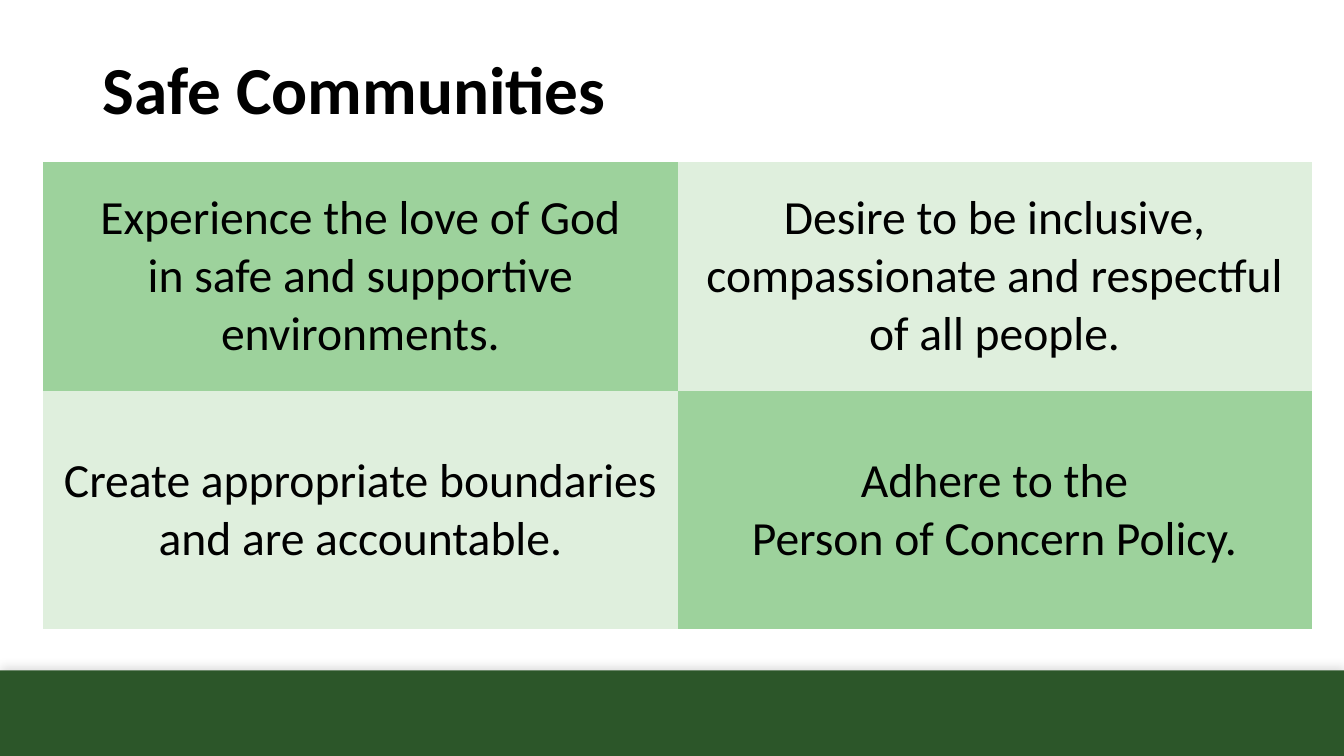
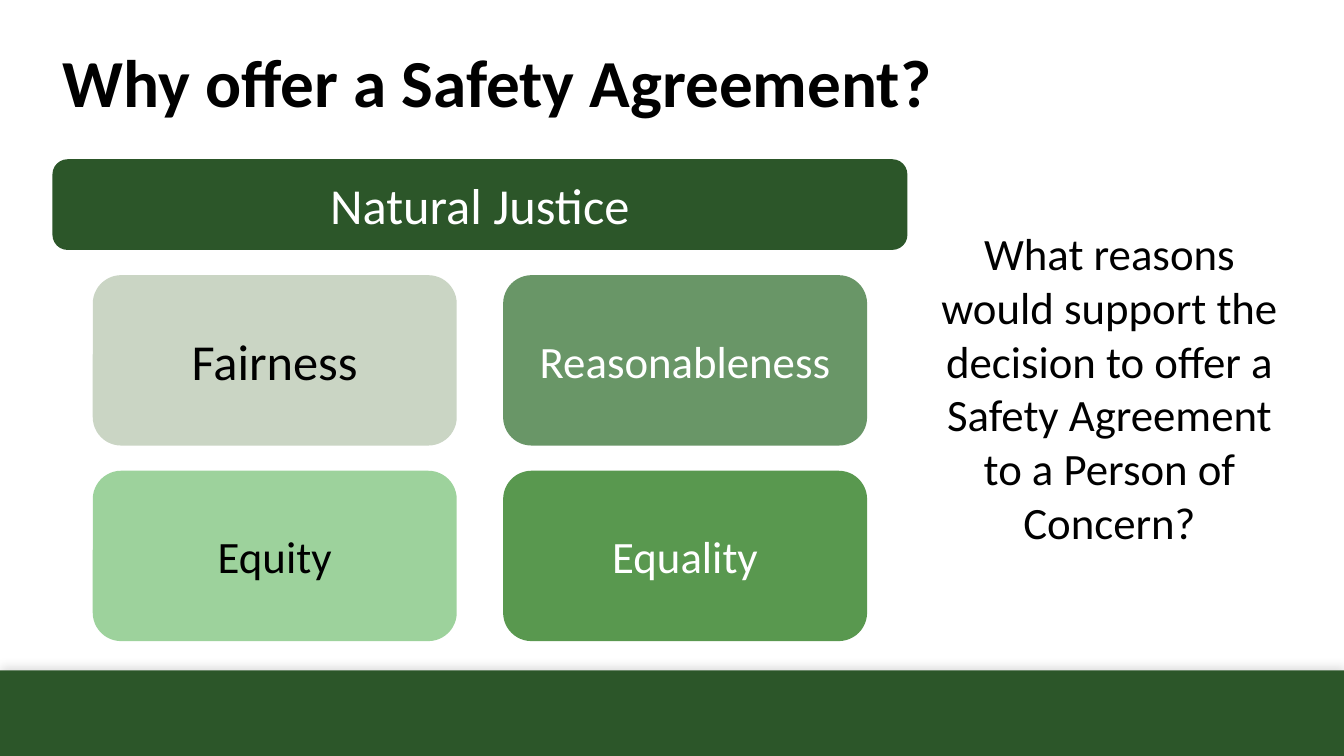
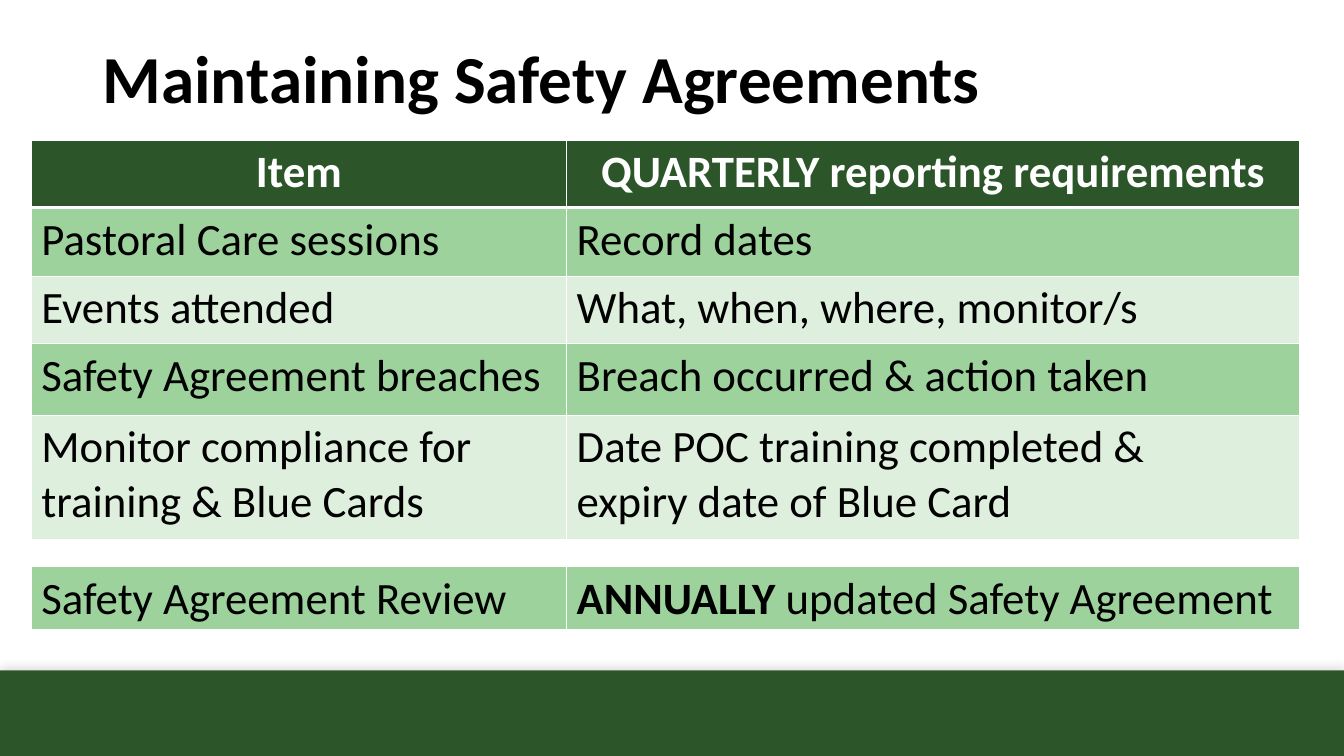
import lxml.etree
import pptx
import pptx.dml.color
import pptx.enum.shapes
import pptx.enum.text
import pptx.oxml.ns
import pptx.util

Inches = pptx.util.Inches
Align = pptx.enum.text.PP_ALIGN
Anchor = pptx.enum.text.MSO_ANCHOR
Shape = pptx.enum.shapes.MSO_SHAPE
qn = pptx.oxml.ns.qn

COLORS = {
    "black": "000000", "white": "FFFFFF", "forest": "2C5629", "mint": "9DD29C",
    "pale": "DFEFDD", "sage": "CAD5C4", "moss": "699667", "leaf": "59984F",
}
FONT = "Calibri"
PLAIN_TABLE_STYLE = "{2D5ABB26-0587-4C30-8999-92F81FD0307C}"
SLIDE_WIDTH, SLIDE_HEIGHT, BAND_HEIGHT = 13.33, 7.5, 0.85

COMMUNITY_ROWS = [
    ("Experience the love of God\vin safe and supportive environments.",
     "Desire to be inclusive, compassionate and respectful of all people."),
    ("Create appropriate boundaries and are accountable.",
     "Adhere to the\vPerson of Concern Policy."),
]
JUSTICE_CARDS = [
    [("Fairness", 36, "black", "sage"), ("Reasonableness", 32, "white", "moss")],
    [("Equity", 32, "black", "mint"), ("Equality", 32, "white", "leaf")],
]
REPORT_ROWS = [
    ("Item", "QUARTERLY reporting requirements"),
    ("Pastoral Care sessions", "Record dates"),
    ("Events attended", "What, when, where, monitor/s"),
    ("Safety Agreement breaches", "Breach occurred & action taken"),
    ("Monitor compliance for training & Blue Cards",
     "Date POC training completed &\nexpiry date of Blue Card"),
]
REPORT_COLUMNS = [5.31, 7.27]


def rgb(name):
    """Return the named colour."""
    return pptx.dml.color.RGBColor.from_string(COLORS[name])


def write_text(frame, text, size=32, color="black", bold=False, lead="",
               align=Align.LEFT, line_spacing=None):
    """Write paragraphs split at newlines, with an optional bold lead."""
    frame.word_wrap = True
    for index, line in enumerate(text.split("\n")):
        paragraph = frame.add_paragraph() if index else frame.paragraphs[0]
        paragraph.text = line
        if lead and not index:
            paragraph.text = ""
            paragraph.add_run().text = lead
            paragraph.add_run().text = line
        paragraph.alignment = align
        paragraph.line_spacing = line_spacing
        for position, run in enumerate(paragraph.runs):
            run.font.name = FONT
            run.font.size = pptx.util.Pt(size)
            run.font.bold = bold or bool(lead and not index and not position)
            run.font.color.rgb = rgb(color)


def add_text(slide, box, text, anchor=Anchor.TOP, **text_format):
    """Add a text box filling the given box."""
    frame = slide.shapes.add_textbox(*map(Inches, box)).text_frame
    frame.vertical_anchor = anchor
    write_text(frame, text, **text_format)


def add_block(slide, kind, box, fill):
    """Add a filled shape without an outline."""
    shape = slide.shapes.add_shape(kind, *map(Inches, box))
    shape.shadow.inherit = False
    shape.fill.solid()
    shape.fill.fore_color.rgb = rgb(fill)
    shape.line.fill.background()
    return shape


def add_card(slide, box, text, size, color, fill):
    """Add a rounded card with a centred label."""
    frame = add_block(slide, Shape.ROUNDED_RECTANGLE, box, fill).text_frame
    frame.vertical_anchor = Anchor.MIDDLE
    write_text(frame, text, size=size, color=color, align=Align.CENTER)


def add_band(slide):
    """Add the footer band with a soft upward shadow."""
    box = (0, SLIDE_HEIGHT - BAND_HEIGHT, SLIDE_WIDTH, BAND_HEIGHT)
    band = add_block(slide, Shape.RECTANGLE, box, "forest")
    effects = band._element.spPr.find(qn("a:effectLst"))
    shadow = lxml.etree.SubElement(
        effects, qn("a:outerShdw"), blurRad=str(pptx.util.Pt(7)),
        dist=str(pptx.util.Pt(3)), dir="16200000", rotWithShape="0")
    color = lxml.etree.SubElement(shadow, qn("a:srgbClr"), val=COLORS["black"])
    lxml.etree.SubElement(color, qn("a:alpha"), val="13000")


def add_titled_slide(presentation, title, left, top):
    """Add a blank slide with the shared band and title style."""
    slide = presentation.slides.add_slide(presentation.slide_layouts[6])
    add_band(slide)
    add_text(slide, (left, top, 11.5, 1.45), title, anchor=Anchor.MIDDLE,
             size=48, bold=True, line_spacing=0.9)
    return slide


def add_plain_table(slide, left, top, columns, rows):
    """Add an unstyled table with the given column widths and row heights."""
    box = (left, top, sum(columns), sum(rows))
    table = slide.shapes.add_table(len(rows), len(columns), *map(Inches, box)).table
    table.first_row = table.horz_banding = False
    table._tbl.tblPr.find(qn("a:tableStyleId")).text = PLAIN_TABLE_STYLE
    for column, width in zip(table.columns, columns):
        column.width = Inches(width)
    for row, height in zip(table.rows, rows):
        row.height = Inches(height)
    return table


def set_borders(cell, **widths):
    """Draw white cell borders, 1 point wide unless a side is given."""
    for side in "LRTB":
        width = str(pptx.util.Pt(widths.get(side, 1)))
        line = lxml.etree.SubElement(
            cell._tc.get_or_add_tcPr(), qn("a:ln" + side), w=width)
        fill = lxml.etree.SubElement(line, qn("a:solidFill"))
        lxml.etree.SubElement(fill, qn("a:srgbClr"), val=COLORS["white"])


def fill_cell(cell, text, fill, anchor=Anchor.TOP, **text_format):
    """Fill a cell and write its text."""
    cell.fill.solid()
    cell.fill.fore_color.rgb = rgb(fill)
    cell.vertical_anchor = anchor
    write_text(cell.text_frame, text, **text_format)


def add_checkerboard(slide, left, top):
    """Add the two by two board of community aims."""
    table = add_plain_table(slide, left, top, [6.29, 6.29], [2.27, 2.36])
    for row, texts in enumerate(COMMUNITY_ROWS):
        for column, text in enumerate(texts):
            fill = "pale" if (row + column) % 2 else "mint"
            fill_cell(table.cell(row, column), text, fill, anchor=Anchor.MIDDLE,
                      size=34, align=Align.CENTER)


def add_justice_chart(slide, left, top, width):
    """Add the heading card and the grid of principles below it."""
    inset, card_width, card_height, row_step = 0.4, 3.61, 1.69, 1.94
    column_step = width - 2 * inset - card_width
    add_card(slide, (left, top, width, 0.9), "Natural Justice", 36, "white", "forest")
    for row, cards in enumerate(JUSTICE_CARDS):
        for column, card in enumerate(cards):
            box = (left + inset + column * column_step, top + 1.15 + row * row_step,
                   card_width, card_height)
            add_card(slide, box, *card)


def add_report_table(slide, left, top):
    """Add the quarterly reporting table."""
    table = add_plain_table(slide, left, top, REPORT_COLUMNS,
                            [0.67, 0.68, 0.67, 0.71, 1.23])
    header = {"color": "white", "bold": True, "align": Align.CENTER}
    for row, texts in enumerate(REPORT_ROWS):
        for column, text in enumerate(texts):
            cell = table.cell(row, column)
            set_borders(cell, T=3 if row == 1 else 1, B=1 if row else 3)
            if row:
                fill_cell(cell, text, "mint" if row % 2 else "pale")
            else:
                fill_cell(cell, text, "forest", **header)


def add_review_table(slide, left, top):
    """Add the single row for the annual review."""
    table = add_plain_table(slide, left, top, REPORT_COLUMNS, [0.64])
    texts = [("", "Safety Agreement Review"), ("ANNUALLY", " updated Safety Agreement")]
    for column, (lead, text) in enumerate(texts):
        set_borders(table.cell(0, column), B=3)
        fill_cell(table.cell(0, column), text, "mint", lead=lead)


def main():
    """Build and save the presentation."""
    presentation = pptx.Presentation()
    presentation.slide_width = Inches(SLIDE_WIDTH)
    presentation.slide_height = Inches(SLIDE_HEIGHT)

    slide = add_titled_slide(presentation, "Safe Communities", 0.92, 0.19)
    add_checkerboard(slide, 0.43, 1.61)

    slide = add_titled_slide(presentation, "Why offer a Safety Agreement?", 0.52, 0.13)
    add_justice_chart(slide, 0.52, 1.58, 8.48)
    add_text(slide, (9.2, 2.19, 3.61, 3.33),
             "What reasons would support the decision to offer a "
             "Safety Agreement to a Person of Concern?", align=Align.CENTER)

    slide = add_titled_slide(presentation, "Maintaining Safety Agreements", 0.92, 0.09)
    add_report_table(slide, 0.31, 1.39)
    add_review_table(slide, 0.31, 5.62)

    presentation.save("out.pptx")


if __name__ == "__main__":
    main()
